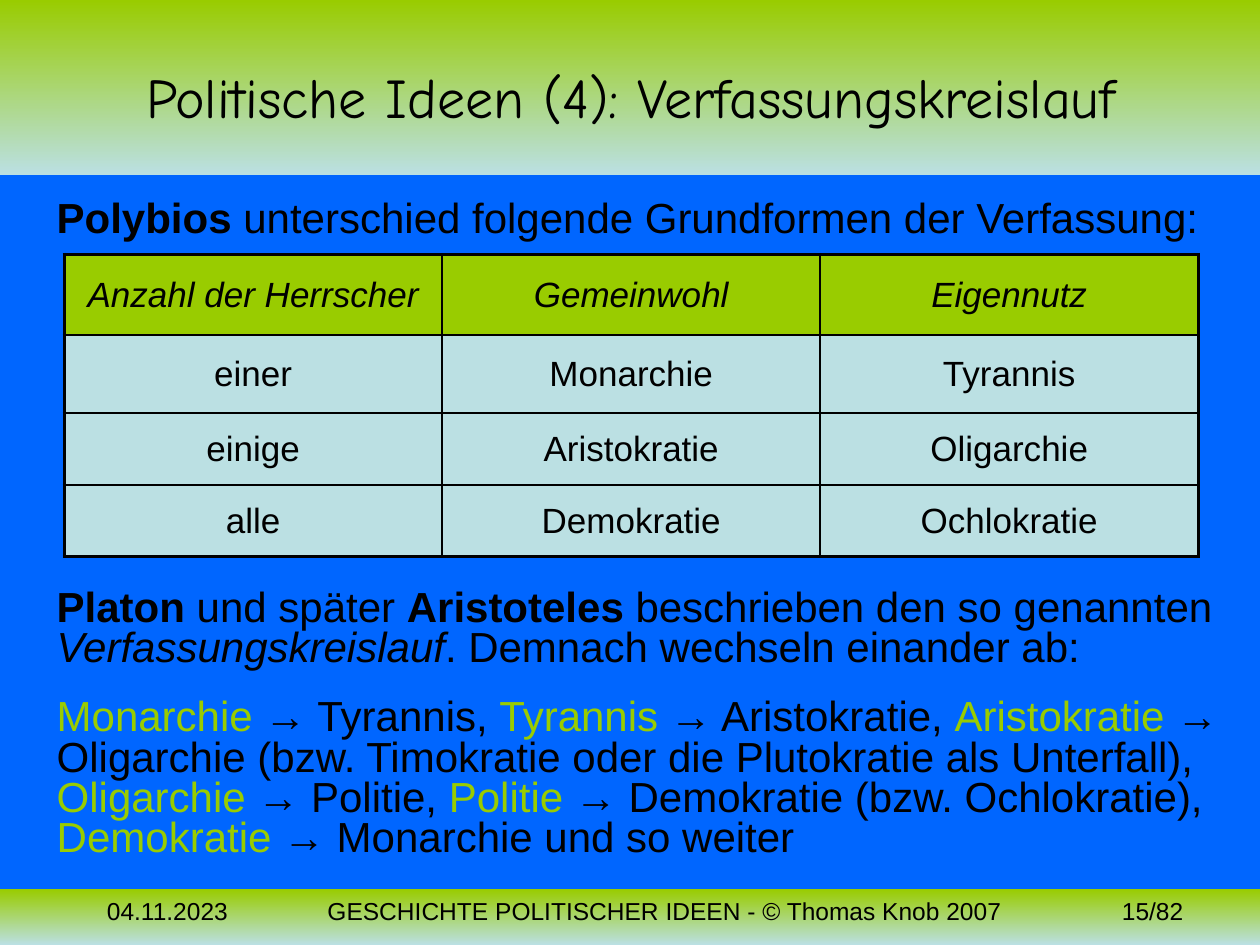
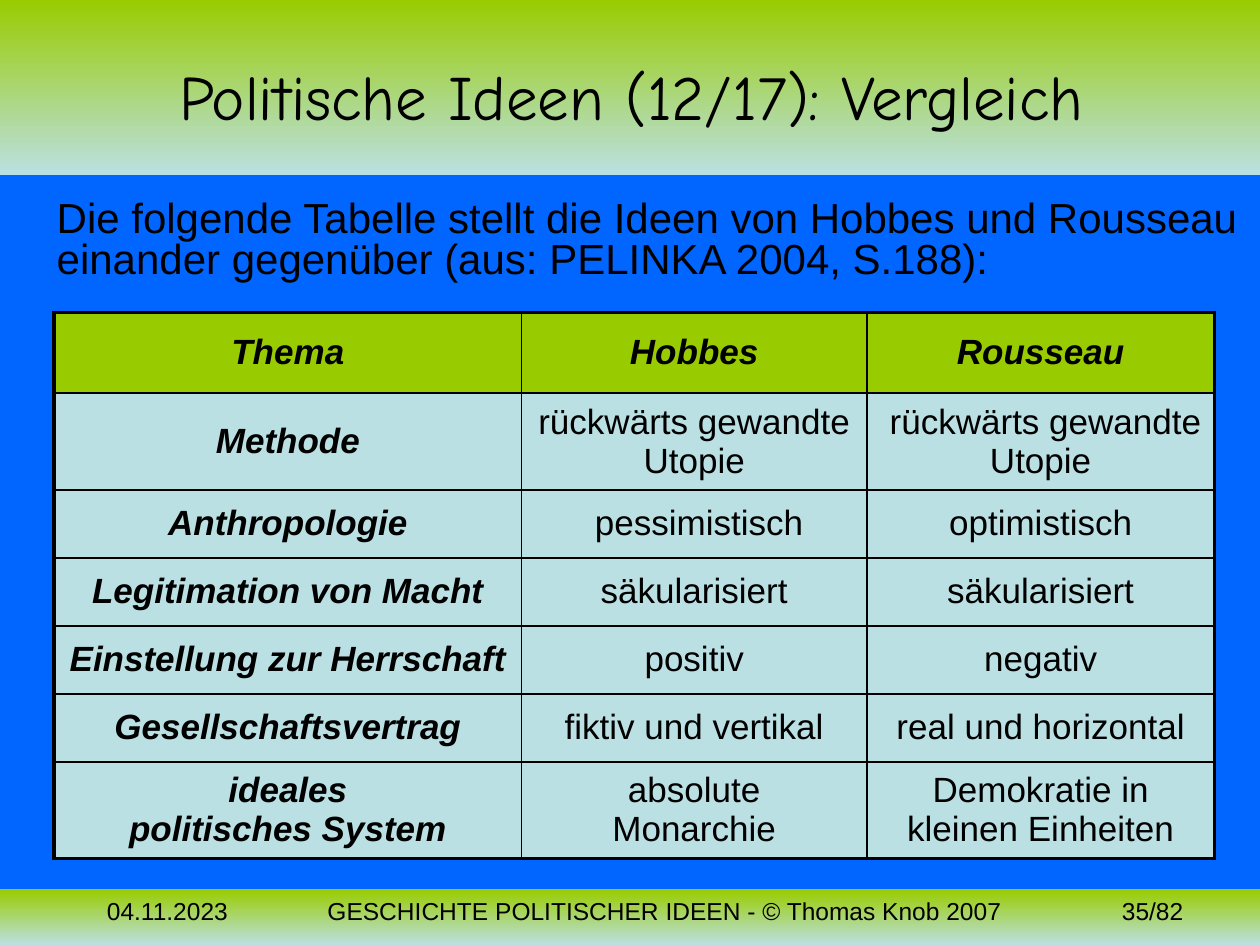
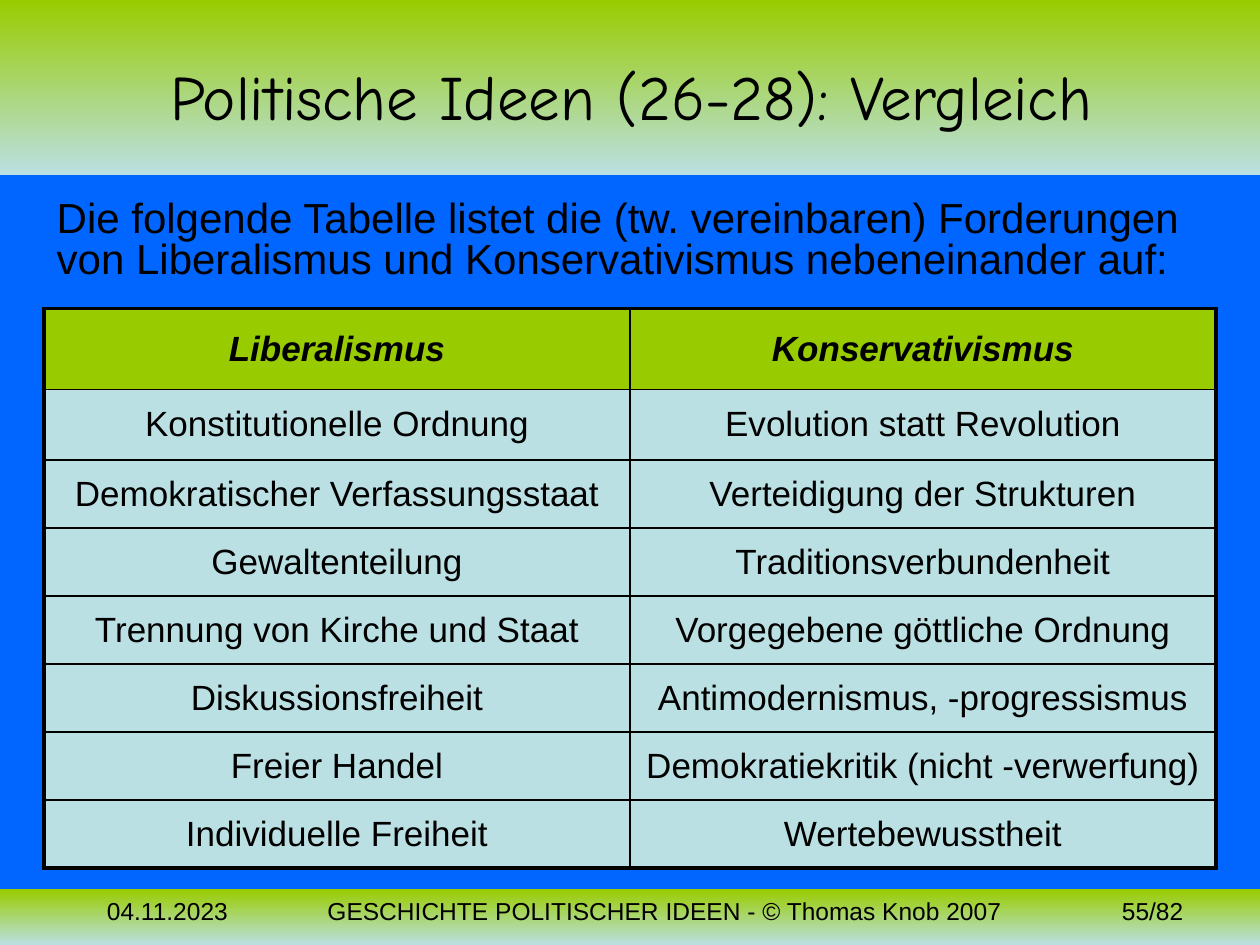
import dataclasses

import lxml.etree
import pptx
import pptx.dml.color
import pptx.enum.shapes
import pptx.enum.text
import pptx.oxml.ns
import pptx.util

Inches = pptx.util.Inches
Pt = pptx.util.Pt
ALIGN = pptx.enum.text.PP_ALIGN
ANCHOR = pptx.enum.text.MSO_ANCHOR


@dataclasses.dataclass(frozen=True)
class Theme:
    background: str = "0066FF"
    green: str = "99CC00"
    pale: str = "BBE0E3"
    ink: str = "000000"
    title_font: str = "Comic Neue"
    text_font: str = "Arial"
    title_size: int = 36
    body_size: int = 24
    table_size: int = 20
    footer_size: int = 14
    outer_line: float = 2.25
    inner_line: float = 1


def color(value):
    return pptx.dml.color.RGBColor.from_string(value)


def apply(target, values):
    for name, value in values.items():
        setattr(target, name, value)


def place(shape, left, top, width, height):
    apply(shape, {"left": Inches(left), "top": Inches(top),
                  "width": Inches(width), "height": Inches(height)})


def add_xml(parent, tag, **attributes):
    return lxml.etree.SubElement(parent, pptx.oxml.ns.qn(tag), attributes)


class Deck:
    def __init__(self, theme):
        self.theme = theme
        self.presentation = pptx.Presentation()
        apply(self.presentation, {"slide_width": Inches(10), "slide_height": Inches(7.5)})
        self.layout = self.presentation.slide_layouts[1]
        self.slide = None
        fill = self.presentation.slide_master.background.fill
        fill.solid()
        fill.fore_color.rgb = color(theme.background)
        title, body = list(self.layout.placeholders)[:2]
        place(title, 0.51, 0.13, 9, 1.26)
        place(body, 0.35, 1.55, 9.65, 5.15)

    def add_slide(self, title, page, title_size=None):
        self.slide = self.presentation.slides.add_slide(self.layout)
        if len(self.presentation.slides) == 1:
            self.add_master_band(0, 1.39)
            self.add_master_band(7.06, 0.44)
        self.add_title(title, title_size or self.theme.title_size)
        self.add_footer("04.11.2023", 0.75, 1.65, ALIGN.LEFT)
        self.add_footer("GESCHICHTE POLITISCHER IDEEN - © Thomas Knob 2007", 2.4, 5.75, ALIGN.CENTER)
        self.add_footer(f"{page}/82", 8.39, 1.1, ALIGN.RIGHT)

    def add_master_band(self, top, height):
        band = self.slide.shapes.add_shape(
            pptx.enum.shapes.MSO_SHAPE.RECTANGLE, 0, Inches(top), Inches(10), Inches(height))
        band.shadow.inherit = False
        band.line.fill.background()
        band.fill.gradient()
        band.fill.gradient_angle = 270
        for stop, value in zip(band.fill.gradient_stops, (self.theme.green, self.theme.pale)):
            stop.color.rgb = color(value)
        self.presentation.slide_master.shapes._spTree.insert(2, band._element)

    def add_text(self, paragraph, text, size, font=None, ink=None, **styles):
        for index, line in enumerate(text.split("\n")):
            if index:
                paragraph.add_line_break()
            run = paragraph.add_run()
            run.text = line
            apply(run.font, {"name": font or self.theme.text_font, "size": Pt(size), **styles})
            run.font.color.rgb = color(ink or self.theme.ink)

    def add_title(self, text, size):
        frame = self.slide.shapes.title.text_frame
        apply(frame, {"vertical_anchor": ANCHOR.MIDDLE, "word_wrap": True,
                      "auto_size": pptx.enum.text.MSO_AUTO_SIZE.NONE})
        frame.paragraphs[0].alignment = ALIGN.CENTER
        self.add_text(frame.paragraphs[0], text, size, self.theme.title_font)

    def add_footer(self, text, left, width, alignment):
        box = self.slide.shapes.add_textbox(Inches(left), Inches(7.06), Inches(width), Inches(0.44))
        box.text_frame.word_wrap = True
        paragraph = box.text_frame.paragraphs[0]
        paragraph.alignment = alignment
        self.add_text(paragraph, text, self.theme.footer_size)

    def add_body(self, *paragraphs):
        frame = self.slide.placeholders[1].text_frame
        frame.auto_size = pptx.enum.text.MSO_AUTO_SIZE.NONE
        for index, (space, pieces) in enumerate(paragraphs):
            paragraph = frame.add_paragraph() if index else frame.paragraphs[0]
            apply(paragraph, {"line_spacing": 0.8, "space_before": Pt(space)})
            properties = paragraph._p.get_or_add_pPr()
            properties.set("marL", "0")
            properties.set("indent", "0")
            add_xml(properties, "a:buNone")
            for text, styles in pieces:
                self.add_text(paragraph, text, self.theme.body_size, **styles)

    def add_table(self, left, top, widths, heights, rows, header, first_column=None):
        table = self.slide.shapes.add_table(
            len(rows), len(widths), Inches(left), Inches(top),
            Inches(sum(widths)), Inches(sum(heights))).table
        apply(table, {"first_row": False, "horz_banding": False})
        for column, width in zip(table.columns, widths):
            column.width = Inches(width)
        for row, height in zip(table.rows, heights):
            row.height = Inches(height)
        for row_index, texts in enumerate(rows):
            for column_index, text in enumerate(texts):
                cell = table.cell(row_index, column_index)
                cell.vertical_anchor = ANCHOR.MIDDLE
                self.add_borders(cell, {
                    "a:lnL": column_index == 0, "a:lnR": column_index == len(widths) - 1,
                    "a:lnT": row_index == 0, "a:lnB": row_index == len(rows) - 1})
                cell.fill.solid()
                cell.fill.fore_color.rgb = color(self.theme.pale if row_index else self.theme.green)
                styles = header if row_index == 0 else {}
                if row_index and column_index == 0:
                    styles = first_column or {}
                paragraph = cell.text_frame.paragraphs[0]
                paragraph.alignment = ALIGN.CENTER
                self.add_text(paragraph, text, self.theme.table_size, **styles)

    def add_borders(self, cell, sides):
        properties = cell._tc.get_or_add_tcPr()
        for tag, is_outer in sides.items():
            width = self.theme.outer_line if is_outer else self.theme.inner_line
            line = add_xml(properties, tag, w=str(Pt(width)))
            add_xml(add_xml(line, "a:solidFill"), "a:srgbClr", val=self.theme.ink)


def main():
    theme = Theme()
    deck = Deck(theme)
    plain, bold, italic = {}, {"bold": True}, {"italic": True}
    strong = {**bold, **italic}
    highlight = {"ink": theme.green}

    deck.add_slide("Politische Ideen (4): Verfassungskreislauf", 15, title_size=32)
    cycle = [
        ("Monarchie", "Tyrannis, "),
        ("Tyrannis", "Aristokratie, "),
        ("Aristokratie", "Oligarchie (bzw. Timokratie oder die Plutokratie als Unterfall), "),
        ("Oligarchie", "Politie, "),
        ("Politie", "Demokratie (bzw. Ochlokratie), "),
        ("Demokratie", "Monarchie und so weiter"),
    ]
    cycle_pieces = [piece for start, end in cycle
                    for piece in ((start, highlight), (f" → {end}", plain))]
    deck.add_body(
        (5, [("Polybios", bold), (" unterschied folgende Grundformen der Verfassung:", plain)]),
        (199, [("Platon", bold), (" und später ", plain), ("Aristoteles", bold),
               (" beschrieben den so genannten ", plain), ("Verfassungskreislauf", italic),
               (". Demnach wechseln einander ab:", plain)]),
        (16.5, cycle_pieces))
    deck.add_table(0.51, 2.02, [3] * 3, [0.64, 0.62, 0.57, 0.57], [
        ("Anzahl der Herrscher", "Gemeinwohl", "Eigennutz"),
        ("einer", "Monarchie", "Tyrannis"),
        ("einige", "Aristokratie", "Oligarchie"),
        ("alle", "Demokratie", "Ochlokratie"),
    ], italic)

    deck.add_slide("Politische Ideen (12/17): Vergleich", 35)
    deck.add_body((5, [("Die folgende Tabelle stellt die Ideen von Hobbes und Rousseau "
                        "einander gegenüber (aus: PELINKA 2004, S.188):", plain)]))
    deck.add_table(0.43, 2.48, [3.71, 2.74, 2.76], [0.64, 0.72] + [0.54] * 4 + [0.72], [
        ("Thema", "Hobbes", "Rousseau"),
        ("Methode", "rückwärts gewandte Utopie", " rückwärts gewandte Utopie"),
        ("Anthropologie", " pessimistisch", "optimistisch"),
        ("Legitimation von Macht", "säkularisiert", "säkularisiert"),
        ("Einstellung zur Herrschaft", "positiv", "negativ"),
        ("Gesellschaftsvertrag", "fiktiv und vertikal", "real und horizontal"),
        ("ideales\npolitisches System", "absolute\nMonarchie", "Demokratie in kleinen Einheiten"),
    ], strong, first_column=strong)

    deck.add_slide("Politische Ideen (26-28): Vergleich", 55)
    deck.add_body((5, [("Die folgende Tabelle listet die (tw. vereinbaren) Forderungen von "
                        "Liberalismus und Konservativismus nebeneinander auf:", plain)]))
    deck.add_table(0.35, 2.45, [4.65] * 2, [0.64, 0.56] + [0.54] * 6, [
        ("Liberalismus", "Konservativismus"),
        ("Konstitutionelle Ordnung", "Evolution statt Revolution"),
        ("Demokratischer Verfassungsstaat", "Verteidigung der Strukturen"),
        ("Gewaltenteilung", "Traditionsverbundenheit"),
        ("Trennung von Kirche und Staat", "Vorgegebene göttliche Ordnung"),
        ("Diskussionsfreiheit", "Antimodernismus, -progressismus"),
        ("Freier Handel", "Demokratiekritik (nicht -verwerfung)"),
        ("Individuelle Freiheit", "Wertebewusstheit"),
    ], strong)

    deck.presentation.save("out.pptx")


if __name__ == "__main__":
    main()
